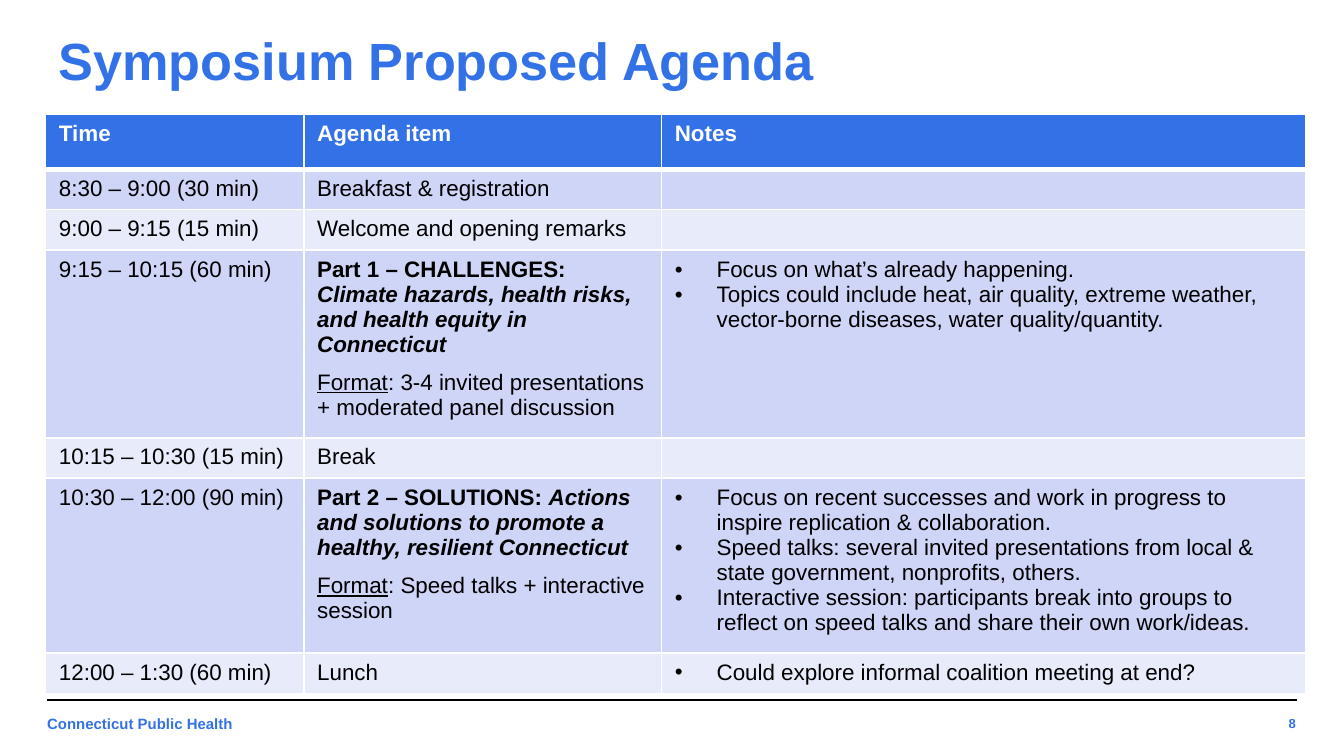
"""Build the symposium agenda slide."""
from dataclasses import dataclass

from lxml.etree import SubElement
from pptx import Presentation
from pptx.dml.color import RGBColor
from pptx.enum.shapes import MSO_CONNECTOR
from pptx.enum.text import MSO_ANCHOR, PP_ALIGN
from pptx.oxml import parse_xml
from pptx.oxml.ns import nsdecls, qn
from pptx.slide import Slide
from pptx.table import _Cell
from pptx.text.text import _Paragraph
from pptx.util import Cm, Pt


@dataclass(frozen=True)
class Theme:
    font: str = "Arial"
    blue: str = "3371E7"
    band: str = "CED5F6"
    light: str = "E8EBFA"
    white: str = "FFFFFF"
    black: str = "000000"
    title: float = 28
    body: float = 12
    footer: float = 8
    number: float = 7
    gap: float = 7


@dataclass(frozen=True)
class Label:
    text: str
    left: float
    top: float
    width: float
    height: float
    size: float
    align: PP_ALIGN = PP_ALIGN.LEFT
    anchor: MSO_ANCHOR = MSO_ANCHOR.MIDDLE


@dataclass(frozen=True)
class Part:
    heading: str
    topic: str
    format: str


@dataclass(frozen=True)
class Session:
    time: str
    item: str | Part
    height: float = 0.73
    notes: tuple[str, ...] = ()


THEME = Theme()
LABELS = (
    Label("Symposium Proposed Agenda", 0.86, 0.71, 23.67, 0.84, THEME.title),
    Label("Connecticut Public Health", 0.64, 13.34, 8.33, 0.86, THEME.footer,
          anchor=MSO_ANCHOR.TOP),
    Label("8", 23.22, 13.36, 1.52, 0.64, THEME.number, PP_ALIGN.RIGHT),
)
HEADERS = ("Time", "Agenda item", "Notes")
HEADER_HEIGHT = 1.04
COL_WIDTHS = (4.88, 6.76, 12.17)
SESSIONS = (
    Session("8:30 – 9:00 (30 min)", "Breakfast & registration"),
    Session("9:00 – 9:15 (15 min)", "Welcome and opening remarks"),
    Session(
        "9:15 – 10:15 (60 min)",
        Part("Part 1 – CHALLENGES: ",
             "Climate hazards, health risks, and health equity in Connecticut",
             ": 3-4 invited presentations + moderated panel discussion"),
        3.33,
        ("Focus on what’s already happening.",
         "Topics could include heat, air quality, extreme weather, "
         "vector-borne diseases, water quality/quantity."),
    ),
    Session("10:15 – 10:30 (15 min)", "Break"),
    Session(
        "10:30 – 12:00 (90 min)",
        Part("Part 2 – SOLUTIONS: ",
             "Actions and solutions to promote a healthy, resilient Connecticut",
             ": Speed talks + interactive session"),
        3.1,
        ("Focus on recent successes and work in progress to inspire "
         "replication & collaboration.",
         "Speed talks: several invited presentations from local & state "
         "government, nonprofits, others.",
         "Interactive session: participants break into groups to reflect on "
         "speed talks and share their own work/ideas."),
    ),
    Session("12:00 – 1:30 (60 min)", "Lunch",
            notes=("Could explore informal coalition meeting at end?",)),
)


def add_run(p: _Paragraph, text: str, size: float, color: str, bold: bool = False,
            italic: bool = False, underline: bool = False) -> None:
    """Append a formatted run to a paragraph."""
    r = p.add_run()
    r.text = text
    f = r.font
    f.name, f.size = THEME.font, Pt(size)
    f.bold, f.italic, f.underline = bold, italic, underline
    f.color.rgb = RGBColor.from_string(color)


def add_label(s: Slide, label: Label) -> None:
    """Draw a bold blue line of text."""
    sp = s.shapes.add_textbox(Cm(label.left), Cm(label.top),
                              Cm(label.width), Cm(label.height))
    tf = sp.text_frame
    tf.word_wrap = True
    tf.vertical_anchor = label.anchor
    tf.margin_left = tf.margin_right = tf.margin_top = tf.margin_bottom = Cm(0.25)
    p = tf.paragraphs[0]
    p.alignment = label.align
    add_run(p, label.text, label.size, THEME.blue, bold=True)


def add_rule(s: Slide) -> None:
    """Draw the line above the footer."""
    line = s.shapes.add_connector(MSO_CONNECTOR.STRAIGHT, Cm(0.89), Cm(13.23),
                                  Cm(24.51), Cm(13.23))
    line.line.color.rgb = RGBColor.from_string(THEME.black)
    line.line.width = Pt(0.75)
    SubElement(line._element.spPr, qn("a:effectLst"))


def style_cell(cell: _Cell, fill: str, top: float = 1, bottom: float = 1) -> None:
    """Fill a cell and give it white borders with widths in points."""
    cell.fill.solid()
    cell.fill.fore_color.rgb = RGBColor.from_string(fill)
    tcPr = cell._tc.get_or_add_tcPr()
    for i, (side, width) in enumerate(zip("LRTB", (1, 1, top, bottom))):
        tcPr.insert(i, parse_xml(
            f'<a:ln{side} {nsdecls("a")} w="{Pt(width)}"><a:solidFill>'
            f'<a:srgbClr val="{THEME.white}"/></a:solidFill></a:ln{side}>'))


def write_item(cell: _Cell, item: str | Part) -> None:
    """Write a plain agenda item, or a part with its topic and format."""
    tf, size, color = cell.text_frame, THEME.body, THEME.black
    p = tf.paragraphs[0]
    if isinstance(item, str):
        add_run(p, item, size, color)
        return
    add_run(p, item.heading, size, color, bold=True)
    add_run(p, item.topic, size, color, bold=True, italic=True)
    p = tf.add_paragraph()
    p.space_before = Pt(THEME.gap)
    add_run(p, "Format", size, color, underline=True)
    add_run(p, item.format, size, color)


def write_notes(cell: _Cell, notes: tuple[str, ...]) -> None:
    """Write bulleted notes, keeping an empty cell at body size."""
    tf = cell.text_frame
    if not notes:
        SubElement(tf.paragraphs[0]._p, qn("a:endParaRPr"), sz=str(int(THEME.body * 100)))
    for i, note in enumerate(notes):
        p = tf.add_paragraph() if i else tf.paragraphs[0]
        pPr = p._p.get_or_add_pPr()
        pPr.set("marL", str(Cm(0.79)))
        pPr.set("indent", str(-Cm(0.79)))
        SubElement(pPr, qn("a:buFont"), typeface=THEME.font)
        SubElement(pPr, qn("a:buChar"), char="•")
        add_run(p, note, THEME.body, THEME.black)


def add_agenda(s: Slide) -> None:
    """Draw the agenda table."""
    heights = (HEADER_HEIGHT, *(session.height for session in SESSIONS))
    table = s.shapes.add_table(len(heights), len(HEADERS), Cm(0.86), Cm(2.16),
                               Cm(sum(COL_WIDTHS)), Cm(sum(heights))).table
    for col, width in zip(table.columns, COL_WIDTHS):
        col.width = Cm(width)
    for row, height in zip(table.rows, heights):
        row.height = Cm(height)
    for cell, text in zip(table.rows[0].cells, HEADERS):
        style_cell(cell, THEME.blue, bottom=3)
        add_run(cell.text_frame.paragraphs[0], text, THEME.body, THEME.white, bold=True)
    for i, session in enumerate(SESSIONS):
        time, item, notes = cells = tuple(table.rows[i + 1].cells)
        for cell in cells:
            style_cell(cell, THEME.light if i % 2 else THEME.band, top=1 if i else 3)
        write_item(time, session.time)
        write_item(item, session.item)
        write_notes(notes, session.notes)


def main() -> None:
    """Build and save the slide."""
    prs = Presentation()
    prs.slide_width, prs.slide_height = Cm(25.4), Cm(14.29)
    s = prs.slides.add_slide(prs.slide_layouts[6])
    for label in LABELS:
        add_label(s, label)
    add_rule(s)
    add_agenda(s)
    prs.save("out.pptx")


if __name__ == "__main__":
    main()
